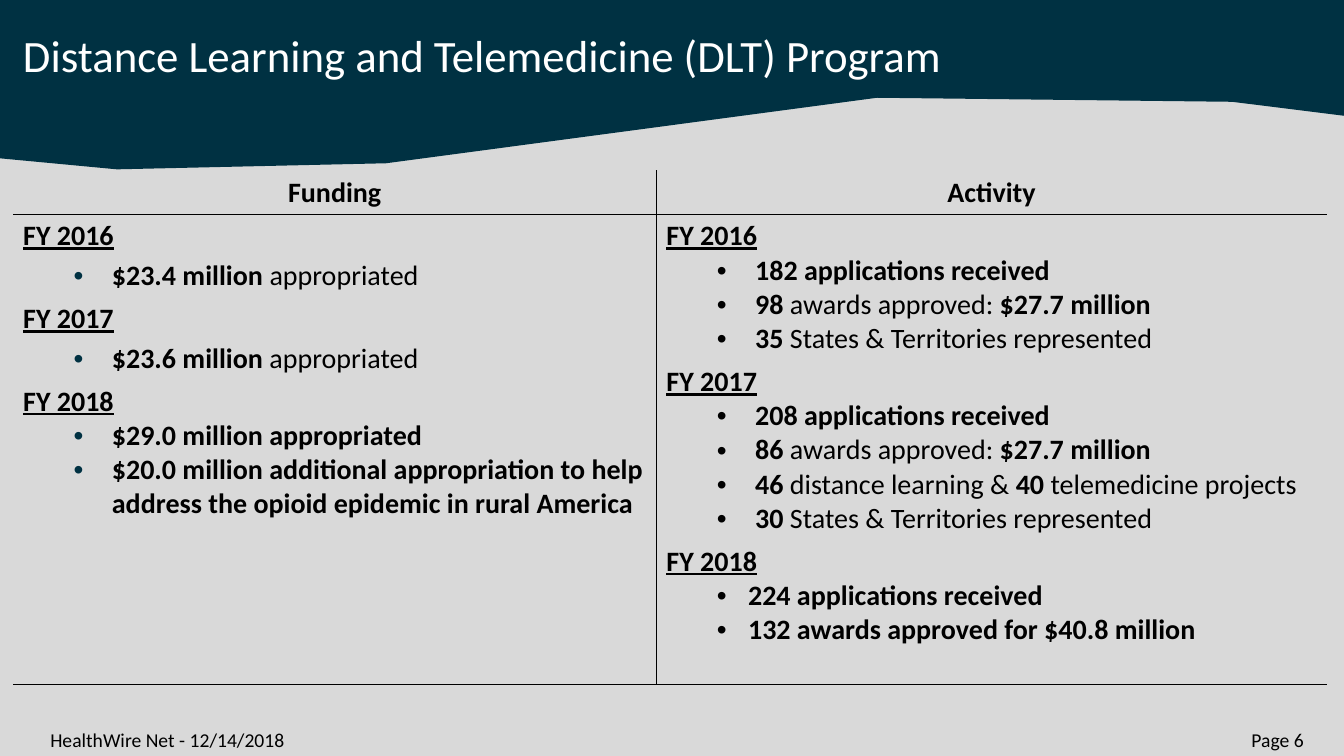
from lxml import etree
from pptx import Presentation
from pptx import util as u
from pptx.dml.color import RGBColor
from pptx.enum import text
from pptx.oxml import ns

WIDTH, HEIGHT = 13.33, 7.5
NAVY, BLACK, WHITE, GREY = "003142", "000000", "FFFFFF", "D9D9D9"
FONT = "Calibri"
BANNER_EDGE = [(13.35, 0), (-0.04, 0), (-0.01, 1.57), (1.16, 1.68), (3.83, 1.62),
               (8.7, 0.97), (12.22, 1.01), (13.34, 1.15)]
WIDE, NARROW = (0.88, 0.38), (0.81, 0.31)
FUNDING = [
    ("FY 2016", WIDE, 4, ["*$23.4 million *appropriated"]),
    ("FY 2017", WIDE, 4, ["*$23.6 million* appropriated"]),
    ("FY 2018", WIDE, 0, [
        "*$29.0 million appropriated*",
        "*$20.0 million additional appropriation to help address the opioid epidemic in rural America*"]),
]
ACTIVITY = [
    ("FY 2016", WIDE, 0, [
        "*182 applications received*",
        "*98 *awards approved: *$27.7 million*",
        "*35 *States & Territories represented"]),
    ("FY 2017", WIDE, 0, [
        "*208 applications received*",
        "*86 *awards approved: *$27.7 million*",
        "*46 *distance learning & *40 *telemedicine projects",
        "*30 *States & Territories represented"]),
    ("FY 2018", NARROW, 0, [
        "*224 applications received*",
        "*132 awards approved for $40.8 million*"]),
]


def paint(color_format, color):
    """Give a colour format or a solid fill's colour the hex value."""
    color_format.rgb = RGBColor.from_string(color)


def write(paragraph, words, size, color, underline=False):
    """Write words into a paragraph; the parts between asterisks are bold."""
    for place, part in enumerate(words.split("*")):
        if part:
            run = paragraph.add_run()
            run.text = part
            run.font.name, run.font.size = FONT, u.Pt(size)
            run.font.bold = place % 2 == 1
            if underline:
                run.font.underline = True
            paint(run.font.color, color)


def add_bullet(paragraph, margin, hang, color):
    """Give a paragraph a hanging bullet."""
    properties = paragraph._p.get_or_add_pPr()
    properties.set("marL", str(u.Inches(margin)))
    properties.set("indent", str(-u.Inches(hang)))
    tint = etree.SubElement(properties, ns.qn("a:buClr"))
    etree.SubElement(tint, ns.qn("a:srgbClr"), val=color)
    etree.SubElement(properties, ns.qn("a:buFont"), typeface="Arial")
    etree.SubElement(properties, ns.qn("a:buChar"), char="•")


def add_label(slide, box, words, size, color, align=text.PP_ALIGN.LEFT, anchor=text.MSO_ANCHOR.TOP):
    """Place one line of text in a box."""
    frame = slide.shapes.add_textbox(*map(u.Inches, box)).text_frame
    frame.word_wrap = True
    frame.vertical_anchor = anchor
    frame.paragraphs[0].alignment = align
    write(frame.paragraphs[0], words, size, color)


def add_banner(slide):
    """Draw the dark angled band and the title on it."""
    start, *rest = [(u.Inches(x), u.Inches(y)) for x, y in BANNER_EDGE]
    builder = slide.shapes.build_freeform(*start)
    builder.add_line_segments(rest, close=True)
    band = builder.convert_to_shape()
    band.shadow.inherit = False
    band.fill.solid()
    paint(band.fill.fore_color, NAVY)
    band.line.fill.background()
    add_label(slide, (0.13, 0.23, 10.87, 0.63), "Distance Learning and Telemedicine (DLT) Program",
              32, WHITE, anchor=text.MSO_ANCHOR.MIDDLE)


def rule_cell(cell, sides):
    """Rule the named sides of a cell in black and clear the others and the fill."""
    properties = cell._tc.get_or_add_tcPr()
    for side in "LRTB":
        line = etree.SubElement(properties, ns.qn("a:ln" + side), w=str(u.Pt(1)))
        if side in sides:
            fill = etree.SubElement(line, ns.qn("a:solidFill"))
            etree.SubElement(fill, ns.qn("a:srgbClr"), val=BLACK)
        else:
            etree.SubElement(line, ns.qn("a:noFill"))
    cell.fill.background()


def fill_years(cell, years, bullet_color):
    """List each fiscal year with its bulleted facts."""
    frame = cell.text_frame
    for number, (year, (margin, hang), gap, facts) in enumerate(years):
        heading = frame.add_paragraph() if number else frame.paragraphs[0]
        if number:
            heading.space_before = u.Pt(6)
        write(heading, f"*{year}*", 20, BLACK, underline=True)
        for fact in facts:
            item = frame.add_paragraph()
            item.level = 1
            add_bullet(item, margin, hang, bullet_color)
            item.space_before = u.Pt(gap)
            write(item, fact, 20, BLACK)


def add_comparison(slide, box):
    """Set funding beside activity in a ruled table."""
    table = slide.shapes.add_table(2, 2, *map(u.Inches, box)).table
    table.first_row = table.horz_banding = False
    left, top, width, height = box
    table.columns[0].width, table.columns[1].width = u.Inches(6.38), u.Inches(width - 6.38)
    table.rows[0].height, table.rows[1].height = u.Inches(0.43), u.Inches(height - 0.43)
    columns = [("Funding", FUNDING, NAVY, "R"), ("Activity", ACTIVITY, BLACK, "L")]
    for column, (heading, years, bullet_color, inner) in enumerate(columns):
        head, body = table.cell(0, column), table.cell(1, column)
        rule_cell(head, inner + "B")
        rule_cell(body, inner + "TB")
        title = head.text_frame.paragraphs[0]
        title.alignment = text.PP_ALIGN.CENTER
        write(title, f"*{heading}*", 20, BLACK)
        fill_years(body, years, bullet_color)


def add_footer(slide, top):
    """Place the event and the page number along the bottom."""
    add_label(slide, (0.4, top, 10.29, 0.34), "HealthWire Net - 12/14/2018", 14, BLACK)
    add_label(slide, (10.55, top, 2.48, 0.34), "Page 6", 14, BLACK, text.PP_ALIGN.RIGHT)


def main():
    """Build and save the slide."""
    deck = Presentation()
    deck.slide_width, deck.slide_height = u.Inches(WIDTH), u.Inches(HEIGHT)
    slide = deck.slides.add_slide(deck.slide_layouts[6])
    slide.background.fill.solid()
    paint(slide.background.fill.fore_color, GREY)
    add_banner(slide)
    add_footer(slide, 7.17)
    add_comparison(slide, (0.13, 1.69, 13.03, 5.1))
    deck.save("out.pptx")


if __name__ == "__main__":
    main()
